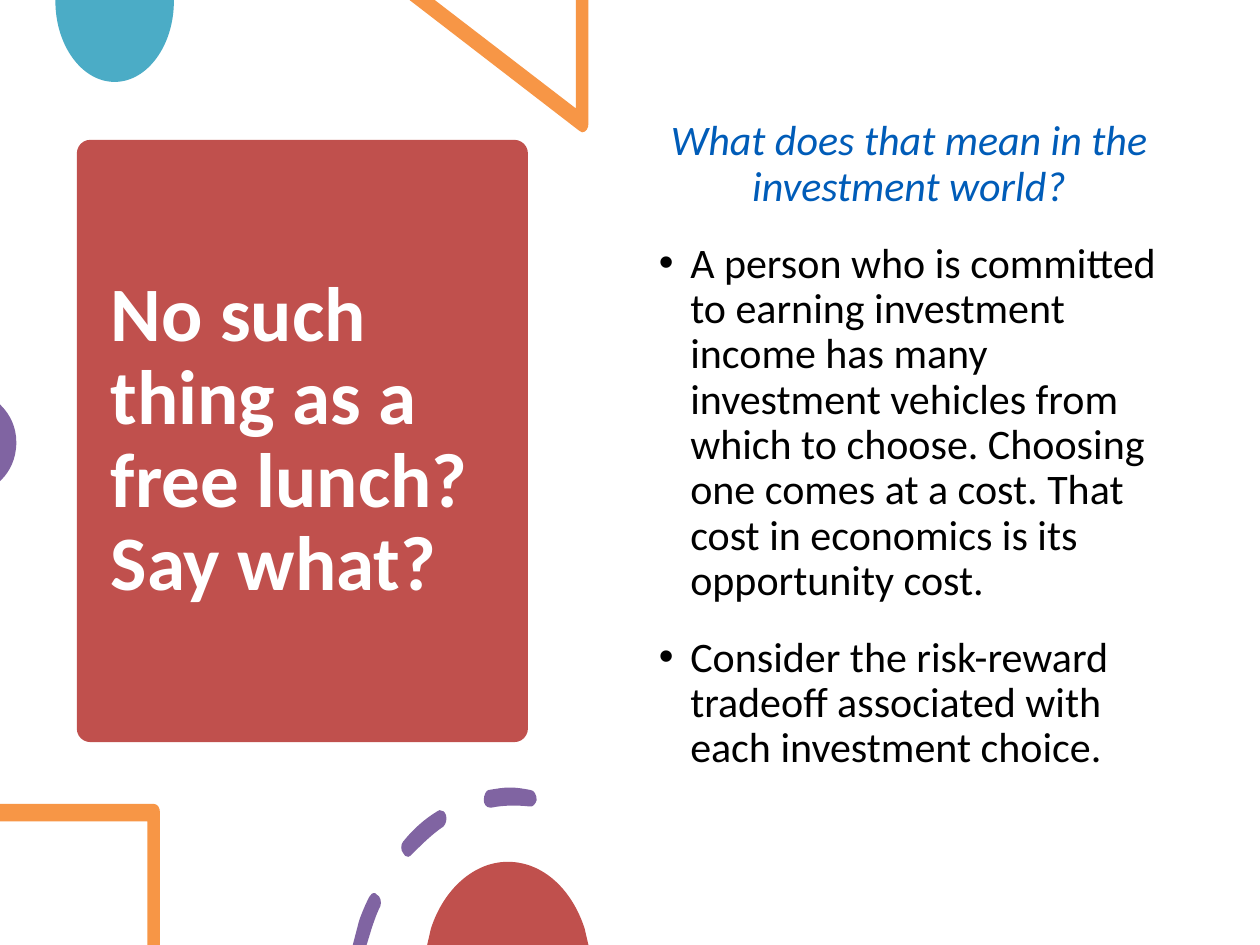
"""Build a slide on opportunity cost, framed by cropped geometric ornaments."""
from dataclasses import dataclass

from lxml.etree import SubElement
from pptx import Presentation
from pptx.dml.color import RGBColor
from pptx.enum.shapes import MSO_SHAPE as Preset
from pptx.enum.text import MSO_ANCHOR as Anchor, MSO_AUTO_SIZE as AutoSize, PP_ALIGN as Align
from pptx.oxml.ns import qn
from pptx.util import Inches, Pt

RED, TEAL, ORANGE, PURPLE = "C0504D", "4BACC6", "F79646", "8064A2"
WHITE, BLUE, BLACK = "FFFFFF", "005CB8", "000000"
FONT = "Calibri"


@dataclass
class Ornament:
    """Closed contours; a pair is a corner and a six-tuple is a cubic curve."""
    color: str
    contours: list[list[tuple[float, ...]]]


@dataclass
class Passage:
    """One paragraph of the body text."""
    text: str
    color: str = BLACK
    is_lead: bool = False


ORNAMENTS_ABOVE = [
    Ornament(TEAL, [[(1.38, 0), (0.44, 0), (0.44, 0.01), (0.44, 0.36, 0.65, 0.65, 0.91, 0.65),
                     (1.17, 0.65, 1.38, 0.36, 1.38, 0.01)]]),
    Ornament(ORANGE, [[(4.67, 0), (4.57, 0), (4.57, 0.86), (3.45, 0), (3.25, 0), (4.6, 1.04),
                       (4.61, 1.05, 4.61, 1.05, 4.62, 1.05),
                       (4.65, 1.05, 4.67, 1.02, 4.67, 0.98)]]),
    Ornament(PURPLE, [[(0, 3.21), (0, 3.82), (0.01, 3.81), (0.08, 3.74, 0.13, 3.64, 0.13, 3.51),
                       (0.13, 3.39, 0.08, 3.29, 0.01, 3.22)]]),
]
ORNAMENTS_BELOW = [
    Ornament(ORANGE, [[(1.22, 6.38), (0, 6.38), (0, 6.52), (1.17, 6.52), (1.17, 7.5), (1.27, 7.5),
                       (1.27, 6.45), (1.27, 6.41, 1.25, 6.38, 1.22, 6.38)]]),
    Ornament(PURPLE, [
        [(2.98, 7.09), (2.96, 7.08, 2.94, 7.1, 2.93, 7.12), (2.9, 7.18, 2.87, 7.25, 2.85, 7.31),
         (2.8, 7.5), (2.91, 7.5), (2.95, 7.37), (2.97, 7.31, 2.99, 7.25, 3.02, 7.19),
         (3.03, 7.16, 3.02, 7.11, 2.99, 7.1), (2.99, 7.09, 2.98, 7.09, 2.98, 7.09)],
        [(3.49, 6.43), (3.48, 6.43, 3.48, 6.43, 3.47, 6.44), (3.37, 6.5, 3.28, 6.58, 3.2, 6.68),
         (3.18, 6.7, 3.18, 6.75, 3.2, 6.77), (3.21, 6.79, 3.22, 6.8, 3.24, 6.8), (3.24, 6.8),
         (3.25, 6.8, 3.26, 6.79, 3.27, 6.78), (3.35, 6.7, 3.43, 6.62, 3.52, 6.56),
         (3.54, 6.54, 3.55, 6.5, 3.54, 6.47), (3.53, 6.44, 3.51, 6.43, 3.49, 6.43)],
        [(4.05, 6.25), (3.99, 6.25, 3.94, 6.26, 3.88, 6.27), (3.86, 6.27, 3.84, 6.31, 3.84, 6.35),
         (3.84, 6.38, 3.86, 6.41, 3.89, 6.41), (3.89, 6.41, 3.9, 6.41, 3.9, 6.41),
         (4, 6.39, 4.1, 6.39, 4.2, 6.4), (4.23, 6.41, 4.25, 6.38, 4.26, 6.35),
         (4.26, 6.31, 4.24, 6.27, 4.21, 6.27), (4.21, 6.27, 4.21, 6.27, 4.21, 6.27),
         (4.16, 6.26, 4.1, 6.25, 4.05, 6.25)],
    ]),
    Ornament(RED, [[(4.03, 6.84), (3.76, 6.84, 3.52, 7.06, 3.42, 7.37), (3.39, 7.5), (4.67, 7.5),
                    (4.64, 7.37), (4.54, 7.06, 4.31, 6.84, 4.03, 6.84)]]),
]
PASSAGES = [
    Passage("What does that mean in the investment world?", BLUE, is_lead=True),
    Passage("A person who is committed to earning investment income has many investment vehicles "
            "from which to choose. Choosing one comes at a cost. That cost in economics is its "
            "opportunity cost."),
    Passage("Consider the risk-reward tradeoff associated with each investment choice."),
]


def rgb(color: str) -> RGBColor:
    """Turn a hex string into a colour."""
    return RGBColor.from_string(color)


def paint(shape, color: str) -> None:
    """Give a shape a flat fill with no outline or shadow."""
    shape.shadow.inherit = False
    shape.fill.solid()
    shape.fill.fore_color.rgb = rgb(color)
    shape.line.fill.background()


def list_points(contour: list[tuple[float, ...]]) -> list[tuple[int, int]]:
    """List corners and curve control points in drawing order."""
    return [(Inches(x), Inches(y)) for step in contour for x, y in zip(step[::2], step[1::2])]


def bend(shape, contours: list[list[tuple[float, ...]]]) -> None:
    """Merge the three segments of each curve into one cubic segment."""
    segments = iter(list(shape._element.iter(qn("a:lnTo"))))
    for contour in contours:
        for step in contour[1:]:
            segment = next(segments)
            if len(step) == 6:
                segment.tag = qn("a:cubicBezTo")
                for _ in range(2):
                    extra = next(segments)
                    segment.append(extra[0])
                    extra.getparent().remove(extra)


def draw_ornament(page, ornament: Ornament) -> None:
    """Draw all contours of an ornament as one freeform."""
    first, *others = [list_points(contour) for contour in ornament.contours]
    builder = page.shapes.build_freeform(*first[0])
    builder.add_line_segments(first[1:], close=True)
    for points in others:
        builder.move_to(*points[0])
        builder.add_line_segments(points[1:], close=True)
    shape = builder.convert_to_shape()
    bend(shape, ornament.contours)
    paint(shape, ornament.color)


def style(para, size: float, color: str) -> None:
    """Set the font and line spacing of a paragraph."""
    para.line_spacing = 0.9
    para.font.name = FONT
    para.font.size = Pt(size)
    para.font.color.rgb = rgb(color)


def draw_title(page) -> None:
    """Set the title on its rounded red panel."""
    panel = page.shapes.add_shape(
        Preset.ROUNDED_RECTANGLE, Inches(0.61), Inches(1.11), Inches(3.58), Inches(4.78))
    panel.adjustments[0] = 0.03
    paint(panel, RED)
    title = page.shapes.title
    page.shapes._spTree.append(title._element)
    title.left, title.top, title.width, title.height = map(Inches, (0.78, 1.22, 3.23, 4.56))
    frame = title.text_frame
    frame.text = "No such thing as a free lunch? Say what?"
    frame.auto_size = AutoSize.NONE
    frame.word_wrap = True
    frame.vertical_anchor = Anchor.MIDDLE
    para = frame.paragraphs[0]
    para.alignment = Align.LEFT
    style(para, 44, WHITE)
    para.font.bold = True


def draw_body(page) -> None:
    """Write the lead question and its bulleted answers."""
    box = page.shapes.add_textbox(Inches(5), Inches(0.9), Inches(4.31), Inches(5.35))
    frame = box.text_frame
    frame.word_wrap = True
    for index, passage in enumerate(PASSAGES):
        para = frame.add_paragraph() if index else frame.paragraphs[0]
        para.text = passage.text
        properties = para._p.get_or_add_pPr()
        margin, indent = (0.12, 0) if passage.is_lead else (0.38, -0.25)
        properties.set("marL", str(Inches(margin)))
        properties.set("indent", str(Inches(indent)))
        if not passage.is_lead:
            SubElement(properties, qn("a:buFont"), typeface="Arial")
            SubElement(properties, qn("a:buChar"), char="•")
        para.alignment = Align.CENTER if passage.is_lead else Align.LEFT
        para.space_after = Pt(18)
        style(para, 24, passage.color)
        para.font.italic = passage.is_lead


def main() -> None:
    """Build and save the deck."""
    deck = Presentation()
    deck.slide_width, deck.slide_height = Inches(10), Inches(7.5)
    page = deck.slides.add_slide(deck.slide_layouts[5])
    draw_title(page)
    for ornament in ORNAMENTS_ABOVE:
        draw_ornament(page, ornament)
    draw_body(page)
    for ornament in ORNAMENTS_BELOW:
        draw_ornament(page, ornament)
    deck.save("out.pptx")


if __name__ == "__main__":
    main()
